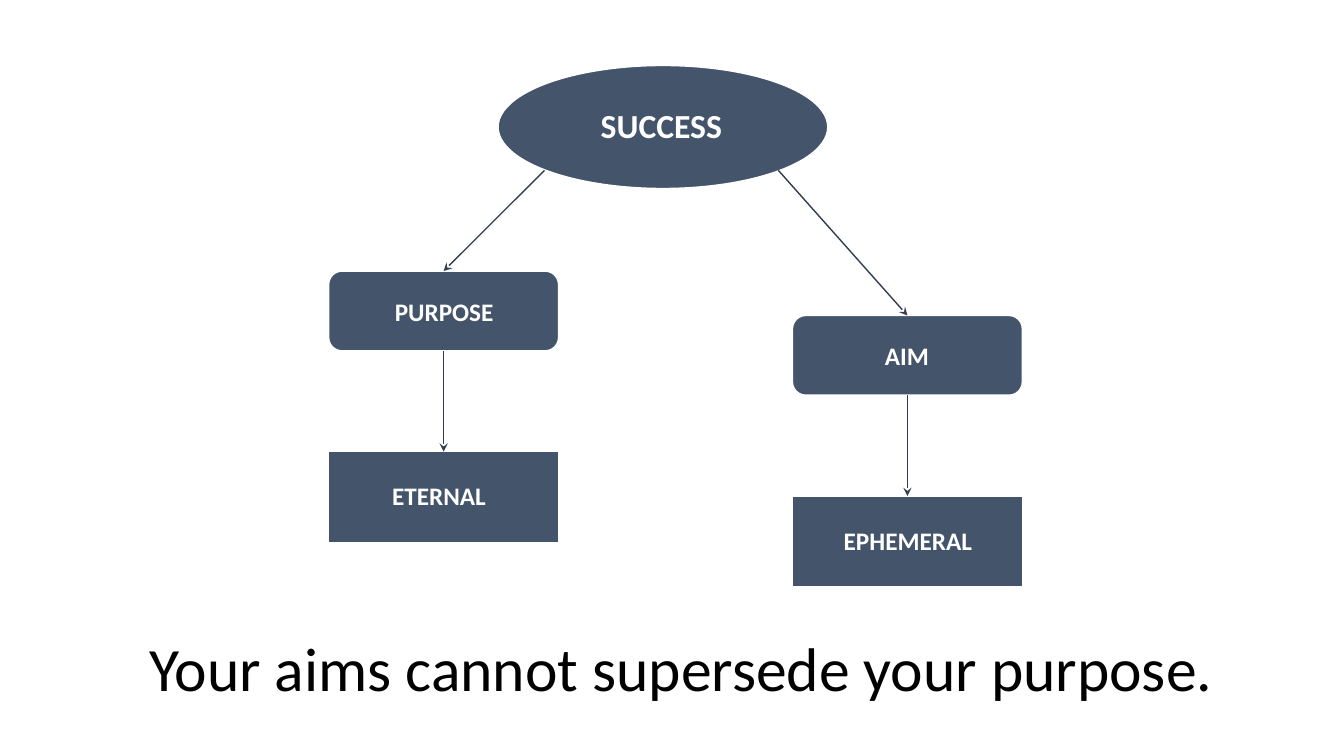
from pptx import Presentation
from pptx.util import Inches, Pt
from pptx.dml.color import RGBColor
from pptx.enum.shapes import MSO_SHAPE as Kind, MSO_CONNECTOR as Link
from pptx.enum.text import PP_ALIGN as Align, MSO_ANCHOR as Anchor
from pptx.oxml.ns import qn
from lxml.etree import SubElement

COLORS = {"slate": "44546A", "arrow": "333F50", "white": "FFFFFF", "black": "000000"}

deck = Presentation()
deck.slide_width, deck.slide_height = Inches(13.33), Inches(7.5)
slide = deck.slides.add_slide(deck.slide_layouts[6])


def add_node(kind, left, top, width, height):
    node = slide.shapes.add_shape(
        kind, Inches(left), Inches(top), Inches(width), Inches(height))
    node.shadow.inherit = False
    node.fill.solid()
    node.fill.fore_color.rgb = RGBColor.from_string(COLORS["slate"])
    node.line.color.rgb = RGBColor.from_string(COLORS["white"])
    node.line.width = Pt(1)


def add_label(text, left, top, width, height, size, color="white", bold=True):
    box = slide.shapes.add_textbox(
        Inches(left), Inches(top), Inches(width), Inches(height))
    frame = box.text_frame
    frame.word_wrap = True
    frame.vertical_anchor = Anchor.MIDDLE
    para = frame.paragraphs[0]
    para.alignment = Align.CENTER
    run = para.add_run()
    run.text = text
    run.font.name = "Calibri"
    run.font.size = Pt(size)
    run.font.bold = bold
    run.font.color.rgb = RGBColor.from_string(COLORS[color])
    return para


add_node(Kind.OVAL, 4.94, 0.65, 3.27, 1.22)
add_label("SUCCESS", 5.26, 0.99, 2.6, 0.5, 24)

branches = [
    (3.26, 2.69, 5.4, "PURPOSE", 3.44, 1.93, "ETERNAL", 3.44),
    (7.86, 3.13, 7.72, "AIM", 8.03, 1.93, "EPHEMERAL", 8.09),
]
for left, top, start, goal, goal_x, goal_w, trait, trait_x in branches:
    mid = left + 1.14
    base = top + 1.79
    add_node(Kind.ROUNDED_RECTANGLE, left, top, 2.28, 0.79)
    add_label(goal, goal_x, top + 0.2, goal_w, 0.4, 18)
    add_node(Kind.RECTANGLE, left, base, 2.28, 0.9)
    add_label(trait, trait_x, base + 0.24, 1.83, 0.4, 18)
    for x, y, end in [(start, 1.69, top), (mid, top + 0.79, base)]:
        arrow = slide.shapes.add_connector(
            Link.STRAIGHT, Inches(x), Inches(y), Inches(mid), Inches(end))
        arrow.line.color.rgb = RGBColor.from_string(COLORS["arrow"])
        arrow.line.width = Pt(1)
        SubElement(arrow.line._get_or_add_ln(), qn("a:tailEnd"), type="stealth")
        SubElement(arrow._element.spPr, qn("a:effectLst"))

motto = add_label("Your aims cannot supersede your purpose.",
                  1.01, 5.94, 11.5, 1.45, 44, "black", False)
motto.line_spacing = 0.9

deck.save("out.pptx")
